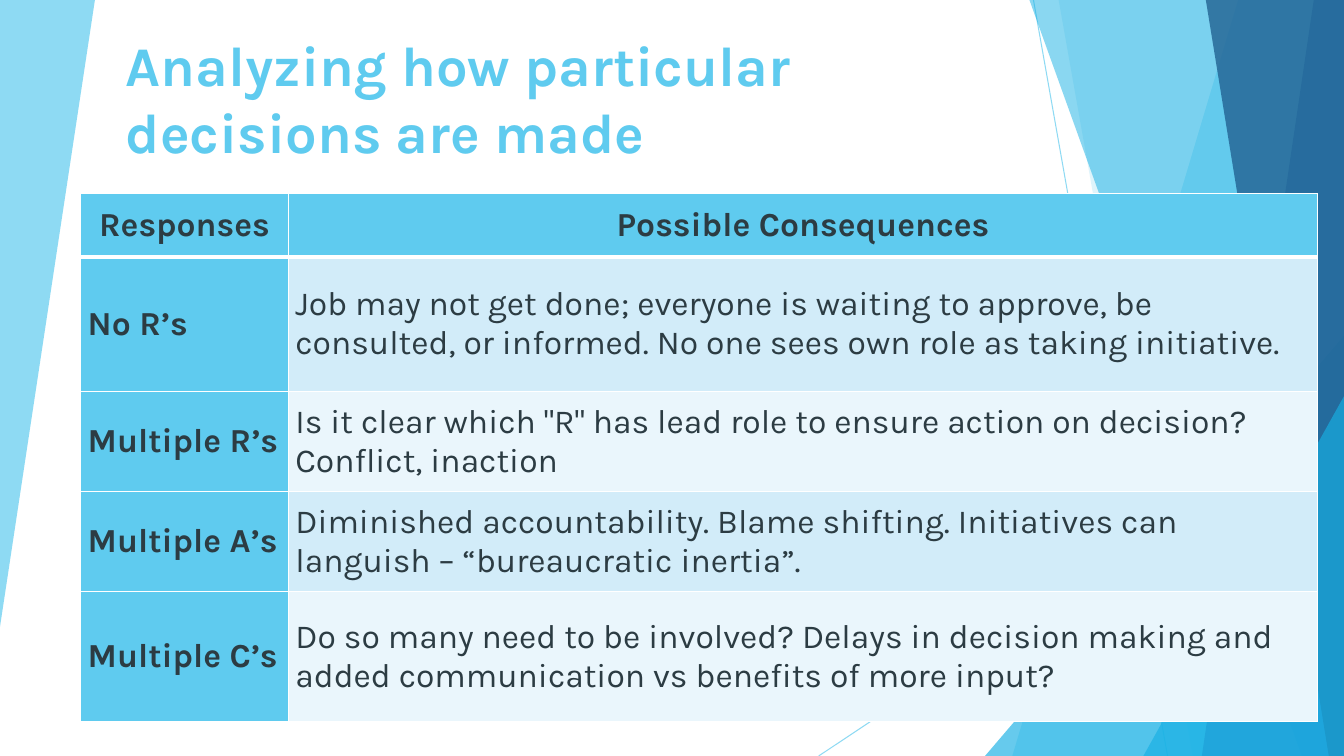
import lxml.etree
import pptx
import pptx.dml.color
import pptx.enum.shapes
import pptx.enum.text
import pptx.oxml.ns
import pptx.util

PX = 9144
SKY, AQUA, BLUE, NAVY = "5FCBEF", "17B0E4", "2E83C3", "226292"
INK, WHITE = "2C3C43", "FFFFFF"
BANDS = ["D2ECF9", "EAF6FC"]
WIDE, HIGH = 1333, 750

qn = pptx.oxml.ns.qn
PP = pptx.enum.text.PP_ALIGN
MID = pptx.enum.text.MSO_ANCHOR.MIDDLE


def px(num):
    return pptx.util.Emu(num * PX)


def color(code):
    return pptx.dml.color.RGBColor.from_string(code)


class Deck:
    def __init__(self, font):
        self.font = font
        self.file = pptx.Presentation()
        self.file.slide_width = px(WIDE)
        self.file.slide_height = px(HIGH)
        self.slide = self.file.slides.add_slide(self.file.slide_layouts[6])
        self.shapes = self.slide.shapes

    def fade(self, shape, alpha):
        for node in shape._element.spPr.iter(qn("a:srgbClr")):
            lxml.etree.SubElement(node, qn("a:alpha"), val=str(alpha * 1000))

    def paint(self, shape, code, alpha):
        shape.shadow.inherit = False
        shape.fill.solid()
        shape.fill.fore_color.rgb = color(code)
        shape.line.fill.background()
        self.fade(shape, alpha)

    def panel(self, points, code, alpha):
        spots = [(px(x), px(y)) for x, y in points]
        form = self.shapes.build_freeform(*spots[0], scale=1.0)
        form.add_line_segments(spots[1:], close=True)
        self.paint(form.convert_to_shape(), code, alpha)

    def wedge(self, left, top, code, alpha):
        kind = pptx.enum.shapes.MSO_SHAPE.ISOSCELES_TRIANGLE
        shape = self.shapes.add_shape(
            kind, px(left), px(top), px(WIDE - left), px(HIGH - top))
        shape.adjustments[0] = 1
        self.paint(shape, code, alpha)

    def line(self, start, end, code, alpha):
        kind = pptx.enum.shapes.MSO_CONNECTOR.STRAIGHT
        link = self.shapes.add_connector(
            kind, px(start[0]), px(start[1]), px(end[0]), px(end[1]))
        link.line.color.rgb = color(code)
        link.line.width = pptx.util.Pt(0.75)
        self.fade(link, alpha)
        lxml.etree.SubElement(link._element.spPr, qn("a:effectLst"))

    def run(self, para, text, size, code, bold):
        run = para.add_run()
        run.text = text
        run.font.name = self.font
        run.font.size = pptx.util.Pt(size)
        run.font.bold = bold
        run.font.color.rgb = color(code)

    def title(self, text, left, top, width, height):
        box = self.shapes.add_textbox(px(left), px(top), px(width), px(height))
        frame = box.text_frame
        frame.word_wrap = True
        frame.vertical_anchor = MID
        frame.margin_left = frame.margin_right = px(7)
        frame.margin_top = frame.margin_bottom = px(4)
        para = frame.paragraphs[0]
        para.space_after = pptx.util.Pt(6)
        self.run(para, text, 40, SKY, True)

    def edge(self, cell, sides):
        props = cell._tc.get_or_add_tcPr()
        for spot, (side, width) in enumerate(sides.items()):
            line = lxml.etree.Element(
                qn("a:ln" + side), w=str(pptx.util.Pt(width)))
            fill = lxml.etree.SubElement(line, qn("a:solidFill"))
            lxml.etree.SubElement(fill, qn("a:srgbClr"), val=WHITE)
            props.insert(spot, line)

    def cell(self, cell, text, fill, bold, align):
        cell.fill.solid()
        cell.fill.fore_color.rgb = color(fill)
        cell.vertical_anchor = MID
        cell.margin_left = cell.margin_right = px(7)
        cell.margin_top = cell.margin_bottom = 0
        para = cell.text_frame.paragraphs[0]
        para.alignment = align
        self.run(para, text, 24, INK, bold)

    def table(self, left, top, cols, rows, data):
        grid = self.shapes.add_table(
            len(rows), len(cols), px(left), px(top),
            px(sum(cols)), px(sum(rows))).table
        grid.horz_banding = False
        for col, width in zip(grid.columns, cols):
            col.width = px(width)
        for row, height in zip(grid.rows, rows):
            row.height = px(height)
        for r, texts in enumerate(data):
            for c, text in enumerate(texts):
                key = r == 0 or c == 0
                fill = SKY if key else BANDS[(r - 1) % 2]
                cell = grid.cell(r, c)
                self.cell(cell, text, fill, key, PP.LEFT if r else PP.CENTER)
                self.edge(cell, {"L": 1, "R": 1, "T": 3 if r == 1 else 1,
                                 "B": 1 if r else 3})

    def save(self):
        self.file.save("out.pptx")


def main():
    deck = Deck("Karla")
    deck.panel([(0, 0), (94, 0), (94, 1), (0, 622)], SKY, 70)
    deck.line((1025, 0), (1158, HIGH), SKY, 70)
    deck.line((WIDE, 403), (812, HIGH), SKY, 70)

    def shard(top, foot, code, alpha):
        deck.panel([(top, 0), (WIDE, 0), (WIDE, HIGH), (foot, HIGH)],
                   code, alpha)

    shard(1228, 1004, SKY, 36)
    shard(1050, 1183, SKY, 20)
    deck.wedge(977, 333, AQUA, 66)
    shard(1021, 1291, AQUA, 50)
    shard(1303, 1192, BLUE, 70)
    shard(1196, 1318, NAVY, 80)
    deck.wedge(1134, 393, AQUA, 66)

    deck.title("Analyzing how particular decisions are made",
               118, 25, 836, 143)
    deck.table(80, 192, [206, 1021], [63, 133, 100, 99, 129], [
        ("Responses", "Possible Consequences"),
        ("No R’s", "Job may not get done; everyone is waiting to approve, "
         "be consulted, or informed. No one sees own role as taking "
         "initiative."),
        ("Multiple R’s", 'Is it clear which "R" has lead role to ensure '
         "action on decision? Conflict, inaction"),
        ("Multiple A’s", "Diminished accountability. Blame shifting. "
         "Initiatives can languish – “bureaucratic inertia”."),
        ("Multiple C’s", "Do so many need to be involved? Delays in decision "
         "making and added communication vs benefits of more input?"),
    ])
    deck.save()


if __name__ == "__main__":
    main()
